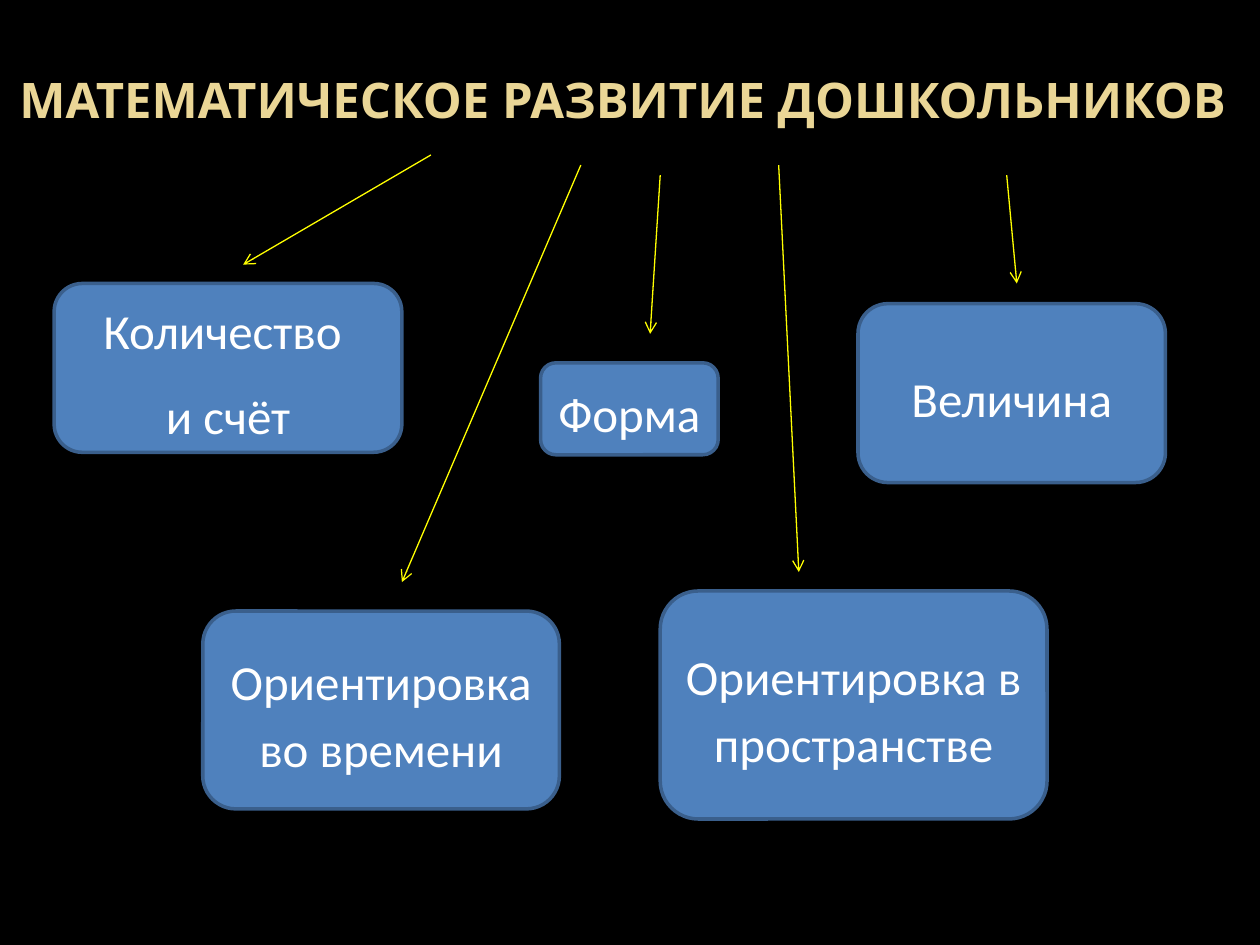
from lxml import etree
from pptx import Presentation
from pptx.dml.color import RGBColor
from pptx.enum.shapes import MSO_CONNECTOR, MSO_SHAPE
from pptx.enum.text import MSO_ANCHOR, PP_ALIGN
from pptx.oxml.ns import qn
from pptx.util import Inches, Pt

ROUNDED = MSO_SHAPE.ROUNDED_RECTANGLE
STRAIGHT = MSO_CONNECTOR.STRAIGHT
CENTER = PP_ALIGN.CENTER
MIDDLE, BOTTOM = MSO_ANCHOR.MIDDLE, MSO_ANCHOR.BOTTOM

BLACK = RGBColor(0x00, 0x00, 0x00)
WHITE = RGBColor(0xFF, 0xFF, 0xFF)
GOLD = RGBColor(0xEA, 0xD6, 0x96)
BLUE = RGBColor(0x4F, 0x81, 0xBD)
DARK_BLUE = RGBColor(0x3A, 0x5F, 0x8C)
YELLOW = RGBColor(0xFF, 0xFF, 0x00)

TEXT_SIZE = Pt(28)
TITLE = "МАТЕМАТИЧЕСКОЕ РАЗВИТИЕ ДОШКОЛЬНИКОВ"

# Topic paragraphs, then left, top, width, height in inches
TOPICS = [
    (["Количество ", "и счёт"], (0.43, 2.25, 2.76, 1.34)),
    (["Величина"], (6.81, 2.41, 2.44, 1.42)),
    (["Форма"], (4.29, 2.88, 1.41, 0.73)),
    (["Ориентировка во времени"], (1.61, 4.85, 2.83, 1.57)),
    (["Ориентировка в пространстве"], (5.24, 4.69, 3.07, 1.81)),
]

# Start x, start y, end x, end y in inches
ARROWS = [
    (3.42, 1.23, 1.93, 2.10),
    (5.24, 1.39, 5.16, 2.65),
    (7.99, 1.39, 8.07, 2.25),
    (4.61, 1.31, 3.19, 4.62),
    (6.18, 1.31, 6.34, 4.54),
]


def add_run(paragraph, text, font_name, color, bold=False):
    paragraph.alignment = CENTER
    run = paragraph.add_run()
    run.text = text
    run.font.name = font_name
    run.font.size = TEXT_SIZE
    run.font.bold = bold
    run.font.color.rgb = color


def add_title(slide):
    box = slide.shapes.add_textbox(Inches(0), Inches(0.36), Inches(9.88), Inches(0.66))
    frame = box.text_frame
    frame.word_wrap = True
    frame.vertical_anchor = BOTTOM
    frame.margin_left = frame.margin_right = Inches(0.05)
    frame.margin_top = frame.margin_bottom = 0
    add_run(frame.paragraphs[0], TITLE, "Noto Sans", GOLD, bold=True)


def add_topic(slide, lines, bounds):
    shape = slide.shapes.add_shape(ROUNDED, *map(Inches, bounds))
    shape.shadow.inherit = False
    shape.fill.solid()
    shape.fill.fore_color.rgb = BLUE
    shape.line.color.rgb = DARK_BLUE
    shape.line.width = Pt(2)
    frame = shape.text_frame
    frame.word_wrap = True
    frame.vertical_anchor = MIDDLE
    for index, line in enumerate(lines):
        paragraph = frame.add_paragraph() if index else frame.paragraphs[0]
        paragraph.line_spacing = 1.15
        paragraph.space_after = Pt(10)
        add_run(paragraph, line, "Calibri", WHITE)


def add_arrow(slide, ends):
    connector = slide.shapes.add_connector(STRAIGHT, *map(Inches, ends))
    connector.line.color.rgb = YELLOW
    connector.line.width = Pt(0.75)
    properties = connector._element.spPr
    etree.SubElement(properties.find(qn("a:ln")), qn("a:tailEnd"), type="arrow")
    etree.SubElement(properties, qn("a:effectLst"))


def main():
    presentation = Presentation()
    presentation.slide_width = Inches(10)
    presentation.slide_height = Inches(7.5)
    slide = presentation.slides.add_slide(presentation.slide_layouts[6])
    slide.background.fill.solid()
    slide.background.fill.fore_color.rgb = BLACK

    add_title(slide)
    for lines, bounds in TOPICS:
        add_topic(slide, lines, bounds)
    for ends in ARROWS:
        add_arrow(slide, ends)

    presentation.save("out.pptx")


if __name__ == "__main__":
    main()
